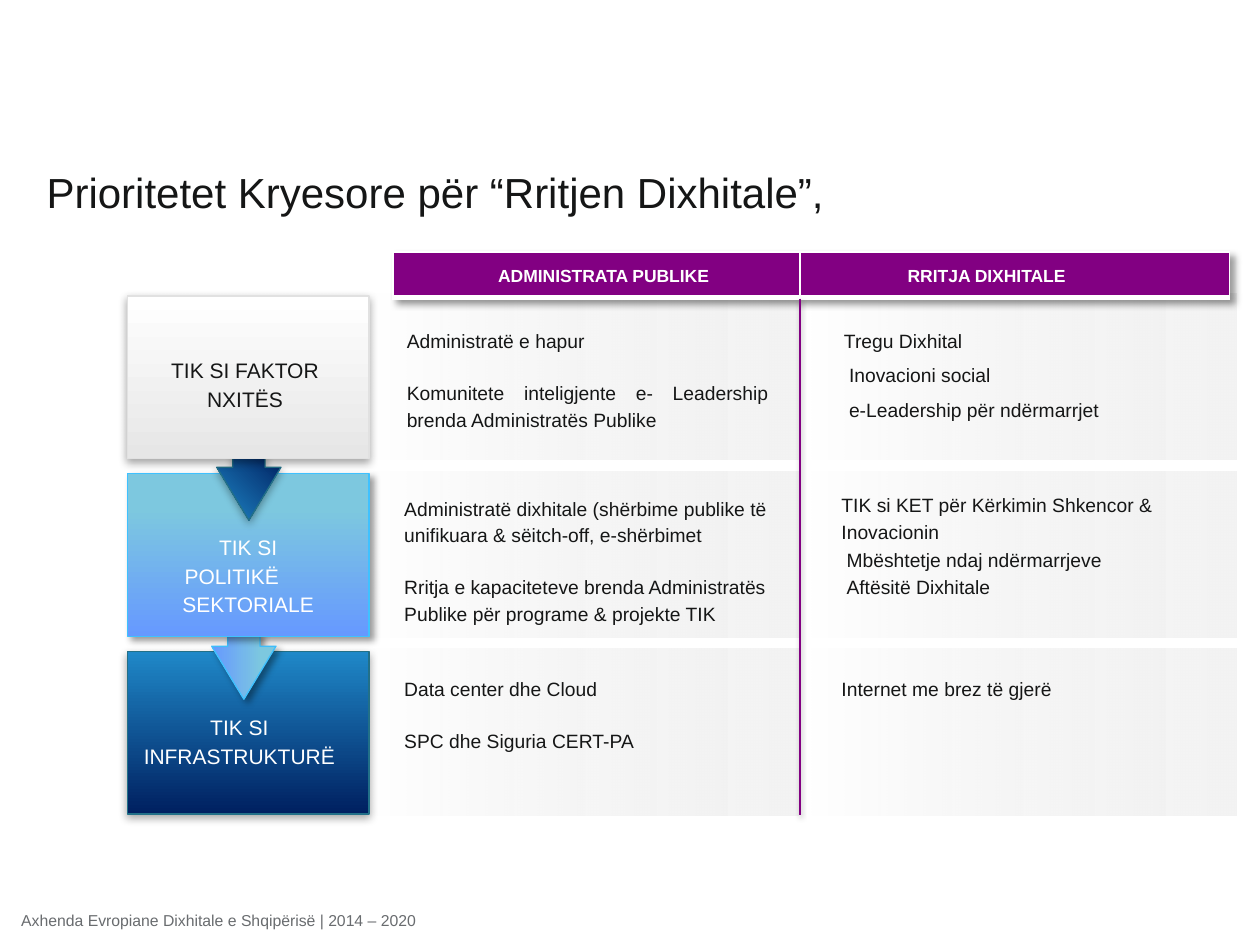
from pptx import Presentation
from pptx.dml.color import RGBColor
from pptx.enum.shapes import MSO_CONNECTOR, MSO_SHAPE
from pptx.enum.text import MSO_ANCHOR, PP_ALIGN
from pptx.oxml import parse_xml
from pptx.oxml.ns import qn
from pptx.util import Inches, Pt

RECT, ARROW = MSO_SHAPE.RECTANGLE, MSO_SHAPE.RIGHT_ARROW
STRAIGHT = MSO_CONNECTOR.STRAIGHT
LEFT, CENTER, JUSTIFY = PP_ALIGN.LEFT, PP_ALIGN.CENTER, PP_ALIGN.JUSTIFY
MIDDLE = MSO_ANCHOR.MIDDLE

FONT = "Arial"
WHITE = RGBColor(0xFF, 0xFF, 0xFF)
INK = RGBColor(0x15, 0x16, 0x16)
GREY = RGBColor(0x69, 0x6C, 0x6F)
PURPLE = RGBColor(0x82, 0x00, 0x82)
SILVER = RGBColor(0xE6, 0xE6, 0xE6)
PALE = RGBColor(0xF3, 0xF3, 0xF3)
NAVY = RGBColor(0x00, 0x20, 0x60)
BLUE = RGBColor(0x1F, 0x88, 0xC8)
AQUA = RGBColor(0x7D, 0xC8, 0xDF)
PERIWINKLE = RGBColor(0x66, 0x99, 0xFF)
TEAL_LINE = RGBColor(0x22, 0x70, 0x88)
SKY_LINE = RGBColor(0x3F, 0xC1, 0xFF)
SILVER_LINE = RGBColor(0xE1, 0xE1, 0xE1)

NS = 'xmlns:a="http://schemas.openxmlformats.org/drawingml/2006/main"'
SOFT = (35, 5, 1.8, 90)
DEEP = (40, 4, 3, 45)
THIN = (38, 3.1, 1.6, 90)

ROW_TOP, ROW_STEP = 2.33, 1.41
BLANK_LINE = 14.5


def effects(shadow=None):
    inner = ""
    if shadow:
        alpha, blur, dist, angle = shadow
        inner = (f'<a:outerShdw blurRad="{Pt(blur)}" dist="{Pt(dist)}" '
                 f'dir="{angle * 60000}" algn="t" rotWithShape="0">'
                 f'<a:srgbClr val="000000"><a:alpha val="{alpha * 1000}"/>'
                 '</a:srgbClr></a:outerShdw>')
    return parse_xml(f'<a:effectLst {NS}>{inner}</a:effectLst>')


def gradient(start, end, angle, first=0, start_alpha=100):
    return parse_xml(
        f'<a:gradFill {NS} rotWithShape="1"><a:gsLst>'
        f'<a:gs pos="{first * 1000}"><a:srgbClr val="{start}">'
        f'<a:alpha val="{start_alpha * 1000}"/></a:srgbClr></a:gs>'
        f'<a:gs pos="100000"><a:srgbClr val="{end}"/></a:gs></a:gsLst>'
        f'<a:lin ang="{angle * 60000}" scaled="0"/></a:gradFill>')


def add_block(s, kind, box, fill, line=None, shadow=None):
    sp = s.shapes.add_shape(kind, *map(Inches, box))
    if line is None:
        sp.line.fill.background()
    else:
        sp.line.color.rgb = line
        sp.line.width = Pt(0.75)
    props = sp._element.spPr
    props.find(qn("a:prstGeom")).addnext(fill)
    props.append(effects(shadow))
    return sp


def add_arrow(s, left, top, fill, line, shadow):
    sp = add_block(s, ARROW, (left, top, 0.53, 0.51), fill, line, shadow)
    sp.adjustments[0] = 0.5
    sp.adjustments[1] = 0.825
    sp.rotation = 90


def format_paragraph(p, size, color, align=LEFT, left=0, right=0, first=0,
                     spacing=1.15, before=0, bold=False):
    p.alignment = align
    p.line_spacing = spacing
    if before:
        p.space_before = Pt(before)
    props = p._p.get_or_add_pPr()
    for name, value in (("marL", left), ("marR", right), ("indent", first)):
        props.set(name, str(Inches(value)))
    for r in p.runs:
        r.font.name = FONT
        r.font.size = Pt(size)
        r.font.bold = bold
        r.font.color.rgb = color


def add_text(s, box, items, size, color, **layout):
    tf = s.shapes.add_textbox(*map(Inches, box)).text_frame
    tf.word_wrap = True
    for i, (text, extra) in enumerate(items):
        p = tf.paragraphs[0] if i == 0 else tf.add_paragraph()
        p.text = text
        format_paragraph(p, size, color, **{**layout, **extra})
    return tf


def add_panels(s):
    for left in (2.96, 6.43):
        for row in range(3):
            box = (left, ROW_TOP + row * ROW_STEP, 3.38, 1.32)
            add_block(s, RECT, box, gradient(SILVER, PALE, 0, start_alpha=0))


def add_priorities(s):
    gap = {"before": BLANK_LINE}
    cells = [
        ((3.03, 2.54, 3.32, 0.94), {"align": JUSTIFY, "left": 0.1, "right": 0.15}, [
            ("Administratë e hapur", {}),
            ("Komunitete inteligjente e- Leadership brenda Administratës Publike", gap)]),
        ((3.05, 3.87, 3.21, 1.17), {"left": 0.06}, [
            ("Administratë dixhitale (shërbime publike të unifikuara & sëitch-off, e-shërbimet", {}),
            ("Rritja e kapaciteteve brenda Administratës Publike për programe & projekte TIK", gap)]),
        ((3.05, 5.3, 2.73, 0.95), {"left": 0.06}, [
            ("Data center dhe Cloud", {}),
            ("SPC dhe Siguria CERT-PA", gap)]),
        ((6.5, 2.47, 3.04, 0.93), {"left": 0.1, "spacing": 1.5}, [
            ("Tregu Dixhital", {}),
            ("Inovacioni social", {"left": 0.14}),
            ("e-Leadership për ndërmarrjet", {"left": 0.14})]),
        ((6.52, 3.84, 3.62, 1.17), {"left": 0.06, "right": 0.3}, [
            ("TIK si KET për Kërkimin Shkencor & Inovacionin", {}),
            ("Mbështetje ndaj ndërmarrjeve", {"left": 0.1, "before": 1}),
            ("Aftësitë Dixhitale", {"left": 0.1})]),
        ((6.52, 5.3, 2.08, 0.53), {"left": 0.06}, [
            ("Internet me brez të gjerë", {})]),
    ]
    for box, layout, items in cells:
        add_text(s, box, items, 11, INK, **layout)


def add_stages(s):
    def stage(row, *style):
        add_block(s, RECT, (1.01, 2.35 + row * ROW_STEP, 1.92, 1.29), *style)

    stage(2, gradient(NAVY, BLUE, 270), TEAL_LINE, SOFT)
    add_arrow(s, 1.67, 5.03, gradient(AQUA, PERIWINKLE, 90, 21), SKY_LINE, DEEP)
    stage(1, gradient(AQUA, PERIWINKLE, 90, 21), SKY_LINE, DEEP)
    add_arrow(s, 1.71, 3.61, gradient(NAVY, BLUE, 45), TEAL_LINE, SOFT)
    stage(0, gradient(SILVER, WHITE, 270), SILVER_LINE, SOFT)

    add_text(s, (1, 2.76, 1.94, 0.78), [("TIK SI FAKTOR NXITËS", {})],
             12, INK, align=CENTER, left=0.1, right=0.15)
    add_text(s, (0.36, 5.59, 3.05, 0.8), [("TIK SI INFRASTRUKTURË", {})],
             12, WHITE, align=CENTER, left=0.64, right=0.61)
    add_text(s, (1, 4.16, 1.94, 1.03), [("TIK SI POLITIKË", {}), ("SEKTORIALE", {})],
             12, WHITE, align=CENTER, right=0.26, first=0.26)


def add_header(s):
    frame = s.shapes.add_table(1, 2, *map(Inches, (3.12, 2, 6.64, 0.36)))
    table = frame.table
    table.first_row = table.horz_banding = False
    table._tbl.tblPr.insert(0, effects(DEEP))
    columns = [("ADMINISTRATA PUBLIKE", 3.23, 0.15, 0.04),
               ("RRITJA DIXHITALE", 3.41, 0, 0.45)]
    for i, (text, width, left, right) in enumerate(columns):
        table.columns[i].width = Inches(width)
        cell = table.cell(0, i)
        cell.margin_left = cell.margin_right = Inches(0.06)
        cell.margin_top = cell.margin_bottom = 0
        cell.vertical_anchor = MIDDLE
        for side, weight in zip("LRTB", (1, 1, 1, 3)):
            cell._tc.get_or_add_tcPr().append(parse_xml(
                f'<a:ln{side} {NS} w="{Pt(weight)}"><a:solidFill>'
                f'<a:srgbClr val="{WHITE}"/></a:solidFill></a:ln{side}>'))
        cell.fill.solid()
        cell.fill.fore_color.rgb = PURPLE
        cell.text_frame.text = text
        format_paragraph(cell.text_frame.paragraphs[0], 10, WHITE, CENTER,
                         left, right, bold=True)


def add_divider(s):
    line = s.shapes.add_connector(STRAIGHT, *map(Inches, (6.35, 2.37, 6.35, 6.47)))
    line.line.color.rgb = PURPLE
    line.line.width = Pt(0.75)
    line._element.spPr.append(effects(THIN))


def main():
    prs = Presentation()
    prs.slide_width, prs.slide_height = Inches(10), Inches(7.5)
    s = prs.slides.add_slide(prs.slide_layouts[6])
    add_text(s, (0.07, 7.18, 8.01, 0.3),
             [("Axhenda Evropiane Dixhitale e Shqipërisë | 2014 – 2020", {})],
             9, GREY, spacing=1.0)
    add_panels(s)
    add_stages(s)
    add_priorities(s)
    title = add_text(s, (0.37, 1.19, 8.56, 0.66),
                     [("Prioritetet Kryesore për “Rritjen Dixhitale”,", {})],
                     24, INK, spacing=1.0)
    title.margin_left = title.margin_right = 0
    title.vertical_anchor = MIDDLE
    add_header(s)
    add_divider(s)
    prs.save("out.pptx")


if __name__ == "__main__":
    main()
